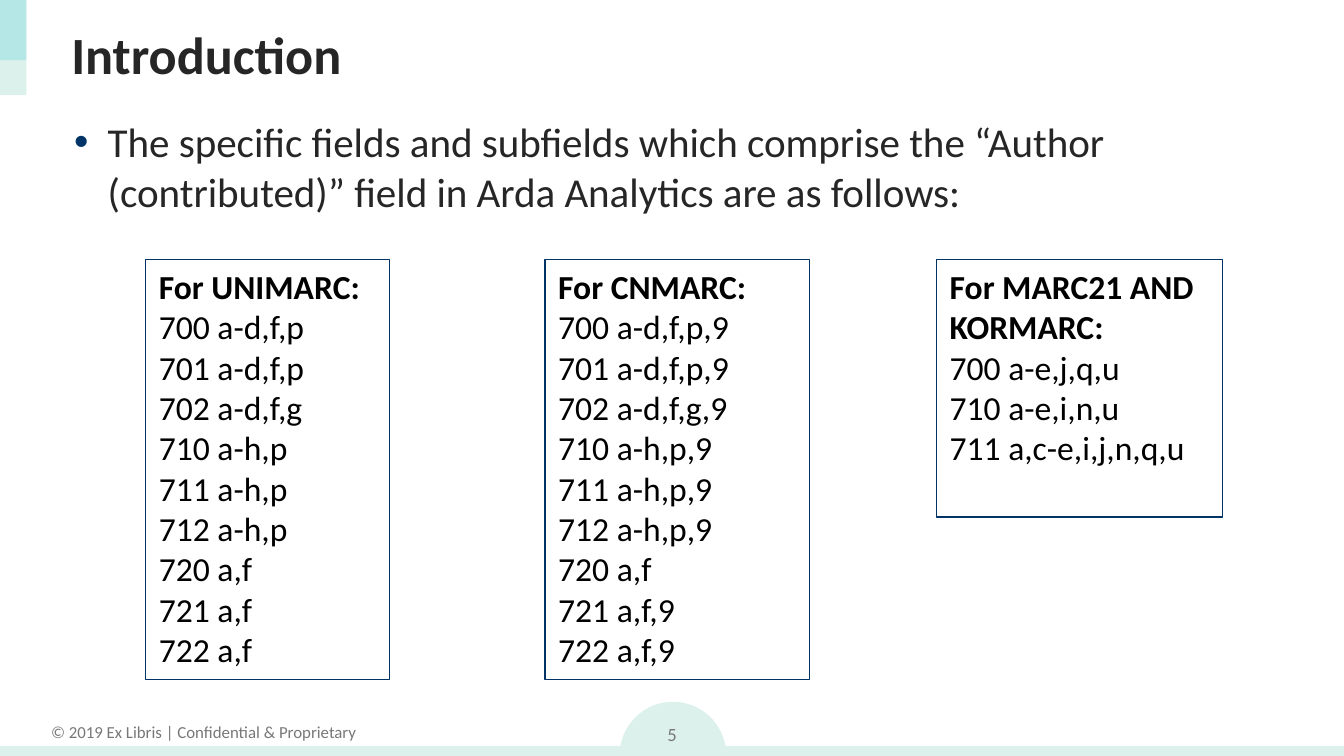
"""Build the Introduction slide listing author fields by MARC format."""
from lxml import etree
from pptx import Presentation
from pptx.dml.color import RGBColor
from pptx.enum.shapes import MSO_SHAPE
from pptx.enum.text import MSO_ANCHOR, MSO_AUTO_SIZE, PP_ALIGN
from pptx.oxml.ns import qn
from pptx.util import Pt

RECT, OVAL = MSO_SHAPE.RECTANGLE, MSO_SHAPE.OVAL
LEFT, CENTER = PP_ALIGN.LEFT, PP_ALIGN.CENTER
TOP, MIDDLE = MSO_ANCHOR.TOP, MSO_ANCHOR.MIDDLE
NO_FIT = MSO_AUTO_SIZE.NONE

THEME = {
    "font": "Calibri",
    "mint": RGBColor.from_string("DCF1EC"),
    "aqua": RGBColor.from_string("50CFDA"),
    "navy": RGBColor.from_string("003466"),
    "ink": RGBColor.from_string("262626"),
    "black": RGBColor.from_string("000000"),
    "grey": RGBColor.from_string("787878"),
    "title": Pt(28),
    "body": Pt(22),
    "list": Pt(18),
    "footer": Pt(9),
    "number": Pt(10),
}


def set_frame(tf, anchor=TOP, wrap=True):
    values = {"word_wrap": wrap, "auto_size": NO_FIT, "vertical_anchor": anchor}
    for name, value in values.items():
        setattr(tf, name, value)


def write(p, text, size, color, bold=False, align=LEFT):
    p.alignment = align
    r = p.add_run()
    r.text = text
    values = {"name": THEME["font"], "size": THEME[size], "bold": bold}
    for name, value in values.items():
        setattr(r.font, name, value)
    r.font.color.rgb = THEME[color]


prs = Presentation()
prs.slide_width, prs.slide_height = Pt(720), Pt(405)
s = prs.slides.add_slide(prs.slide_layouts[5])

decorations = [
    (OVAL, (332, 376, 57, 57), "mint"),
    (RECT, (0, 399.6, 720, 8), "mint"),
    (RECT, (0, 0, 14.2, 51), "mint"),
    (RECT, (0, 0, 14.2, 32.3), "aqua"),
]
for kind, box, color in decorations:
    sp = s.shapes.add_shape(kind, *map(Pt, box))
    sp.shadow.inherit = False
    sp.fill.solid()
    sp.fill.fore_color.rgb = THEME[color]
    sp.line.fill.background()
    if color == "aqua":
        clr = sp.fill._xPr.find(qn("a:solidFill"))[0]
        etree.SubElement(clr, qn("a:alpha"), val="27000")

footers = [
    ((19.5, 383, 179, 18), "© 2019 Ex Libris | Confidential & Proprietary", "footer", TOP, False),
    ((338.7, 379, 42.6, 28.8), "5", "number", MIDDLE, True),
]
for box, text, size, anchor, wrap in footers:
    tf = s.shapes.add_textbox(*map(Pt, box)).text_frame
    set_frame(tf, anchor, wrap)
    write(tf.paragraphs[0], text, size, "grey", align=CENTER)

title = s.shapes.title
title.left, title.top, title.width, title.height = map(Pt, (31, 6, 663, 45.4))
set_frame(title.text_frame, MIDDLE)
write(title.text_frame.paragraphs[0], "Introduction", "title", "ink", bold=True)

tf = s.shapes.add_textbox(*map(Pt, (32.6, 59, 661.7, 70))).text_frame
set_frame(tf)
p = tf.paragraphs[0]
pPr = p._p.get_or_add_pPr()
pPr.set("marL", str(Pt(18)))
pPr.set("indent", str(-Pt(18)))
bullet_color = etree.SubElement(pPr, qn("a:buClr"))
etree.SubElement(bullet_color, qn("a:srgbClr"), val=str(THEME["navy"]))
etree.SubElement(pPr, qn("a:buFont"), typeface="Arial")
etree.SubElement(pPr, qn("a:buChar"), char="•")
write(p, "The specific fields and subfields which comprise the “Author (contributed)” "
      "field in Arda Analytics are as follows:", "body", "ink")

field_lists = [
    (78, 130.6, 225, "For UNIMARC:",
     ["700 a-d,f,p", "701 a-d,f,p", "702 a-d,f,g", "710 a-h,p", "711 a-h,p",
      "712 a-h,p", "720 a,f", "721 a,f", "722 a,f"]),
    (292, 141.8, 225, "For CNMARC:",
     ["700 a-d,f,p,9", "701 a-d,f,p,9", "702 a-d,f,g,9", "710 a-h,p,9", "711 a-h,p,9",
      "712 a-h,p,9", "720 a,f", "721 a,f,9", "722 a,f,9"]),
    (501.7, 153.4, 138, "For MARC21 AND KORMARC:",
     ["700 a-e,j,q,u", "710 a-e,i,n,u", "711 a,c-e,i,j,n,q,u"]),
]
for left, width, height, heading, fields in field_lists:
    sp = s.shapes.add_shape(RECT, Pt(left), Pt(139), Pt(width), Pt(height))
    sp.shadow.inherit = False
    sp.fill.background()
    sp.line.color.rgb = THEME["navy"]
    sp.line.width = Pt(0.75)
    tf = sp.text_frame
    set_frame(tf)
    write(tf.paragraphs[0], heading, "list", "black", bold=True)
    for field in fields:
        write(tf.add_paragraph(), field, "list", "black")

prs.save("out.pptx")
